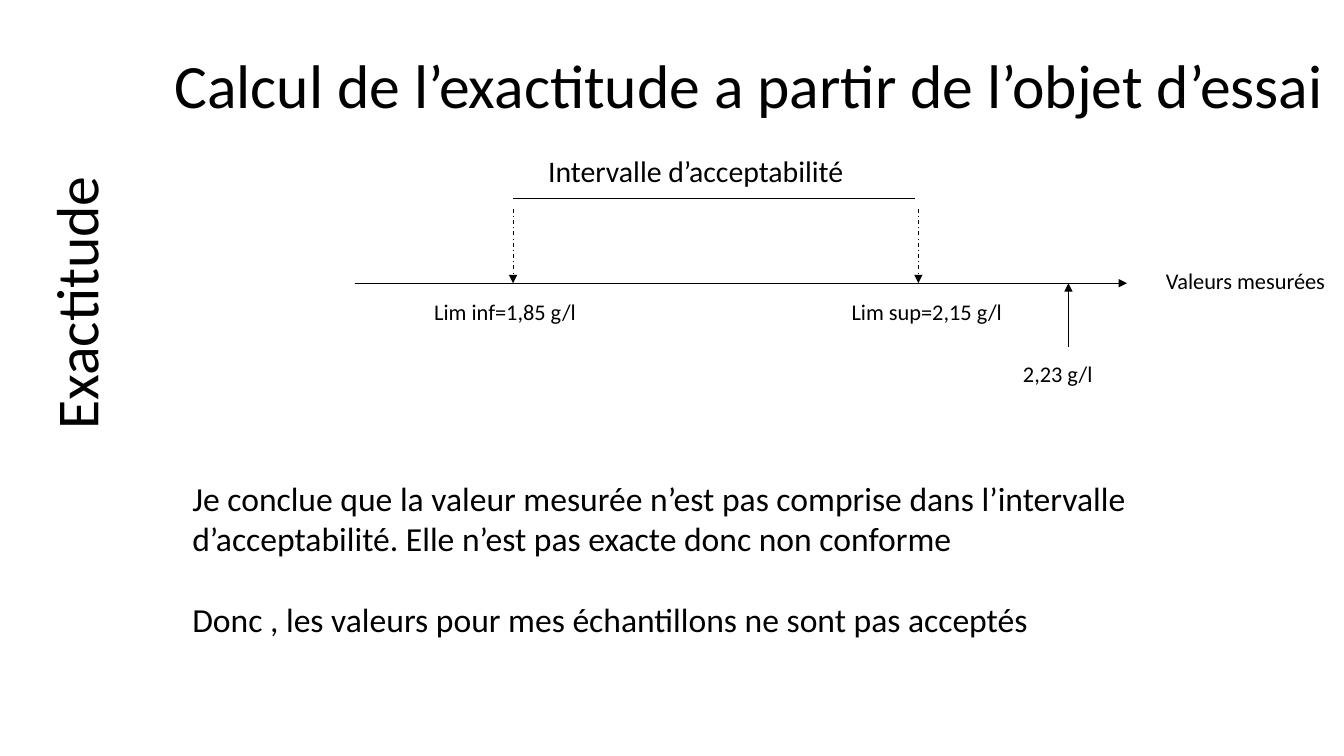
from lxml import etree
from pptx import Presentation
from pptx.dml.color import RGBColor
from pptx.enum.dml import MSO_LINE
from pptx.enum.shapes import MSO_CONNECTOR
from pptx.enum.text import MSO_ANCHOR, MSO_AUTO_SIZE, PP_ALIGN
from pptx.oxml.ns import qn
from pptx.util import Pt

STRAIGHT = MSO_CONNECTOR.STRAIGHT
DASH_DOT = MSO_LINE.DASH_DOT
MIDDLE, TOP = MSO_ANCHOR.MIDDLE, MSO_ANCHOR.TOP
LEFT, CENTER = PP_ALIGN.LEFT, PP_ALIGN.CENTER
NO_FIT, GROW = MSO_AUTO_SIZE.NONE, MSO_AUTO_SIZE.SHAPE_TO_FIT_TEXT
COLORS = {"background": "FFFFFF", "ink": "000000"}
FONT = "Calibri"
INK = RGBColor.from_string(COLORS["ink"])

prs = Presentation()
prs.slide_width, prs.slide_height = Pt(960), Pt(540)
slide = prs.slides.add_slide(prs.slide_layouts[5])
slide.background.fill.solid()
slide.background.fill.fore_color.rgb = RGBColor.from_string(COLORS["background"])


def write(box, place, texts, size, align=LEFT, anchor=TOP, fit=GROW, gap=0):
    box.left, box.top, box.width, box.height = (Pt(v) for v in place)
    frame = box.text_frame
    frame.word_wrap = True
    frame.auto_size = fit
    frame.vertical_anchor = anchor
    for i, text in enumerate(texts):
        paragraph = frame.add_paragraph() if i else frame.paragraphs[0]
        paragraph.alignment = align
        if i:
            paragraph.space_before = Pt(gap)
        run = paragraph.add_run()
        run.text = text
        run.font.name = FONT
        run.font.size = Pt(size)
        run.font.color.rgb = INK


def draw_line(x1, y1, x2, y2, arrow=False, dash=None):
    line = slide.shapes.add_connector(STRAIGHT, Pt(x1), Pt(y1), Pt(x2), Pt(y2))
    line.line.color.rgb = INK
    line.line.width = Pt(0.75)
    if dash:
        line.line.dash_style = dash
    if arrow:
        etree.SubElement(line.line._get_or_add_ln(), qn("a:tailEnd"), type="triangle")
    etree.SubElement(line._element.spPr, qn("a:effectLst"))


# Title
write(slide.shapes.title, (117.4, 36, 842.4, 48.2),
      ["Calcul de l’exactitude a partir de l’objet d’essai"],
      44, anchor=MIDDLE, fit=NO_FIT)

# Axis of measured values
axis_left, axis_y = 253.4, 202.3
draw_line(axis_left, axis_y, 797.8, axis_y)
draw_line(axis_left, axis_y, 805, axis_y, arrow=True)

# Acceptance interval and its limits
lower_x, upper_x = 366.5, 656
draw_line(lower_x, 141.8, 653.8, 141.8)
for limit_x in (lower_x, upper_x):
    draw_line(limit_x, 149, limit_x, axis_y, arrow=True, dash=DASH_DOT)

# Measured value
draw_line(763.2, 247.7, 763.2, axis_y, arrow=True)

# Diagram labels
labels = [
    ("Intervalle d’acceptabilité", 21.3, (384.5, 105.8, 252, 33.1)),
    ("Lim inf=1,85 g/l", 16, (303.1, 209.5, 162.7, 26.6)),
    ("Lim sup=2,15 g/l", 16, (601.2, 209.5, 162.7, 26.6)),
    ("2,23 g/l", 16, (723.6, 253.4, 77.8, 26.6)),
    ("Valeurs mesurées", 16, (825.8, 187.2, 133.9, 26.6)),
]
for text, size, place in labels:
    write(slide.shapes.add_textbox(0, 0, 0, 0), place, [text], size)

# Conclusion
write(slide.shapes.add_textbox(0, 0, 0, 0), (130.3, 337.7, 795.6, 123.8),
      ["Je conclue que la valeur mesurée n’est pas comprise dans l’intervalle "
       "d’acceptabilité. Elle n’est pas exacte donc non conforme",
       "Donc , les valeurs pour mes échantillons ne sont pas acceptés"],
      24, gap=29)

# Vertical heading
heading = slide.shapes.add_textbox(0, 0, 0, 0)
write(heading, (-116.6, 168.5, 339.8, 95.8), ["Exactitude"], 42.6,
      align=CENTER, anchor=MIDDLE, fit=NO_FIT)
heading.rotation = 270
heading.text_frame.margin_left = heading.text_frame.margin_right = Pt(9.4)
heading.text_frame.margin_top = heading.text_frame.margin_bottom = Pt(5)

prs.save("out.pptx")
